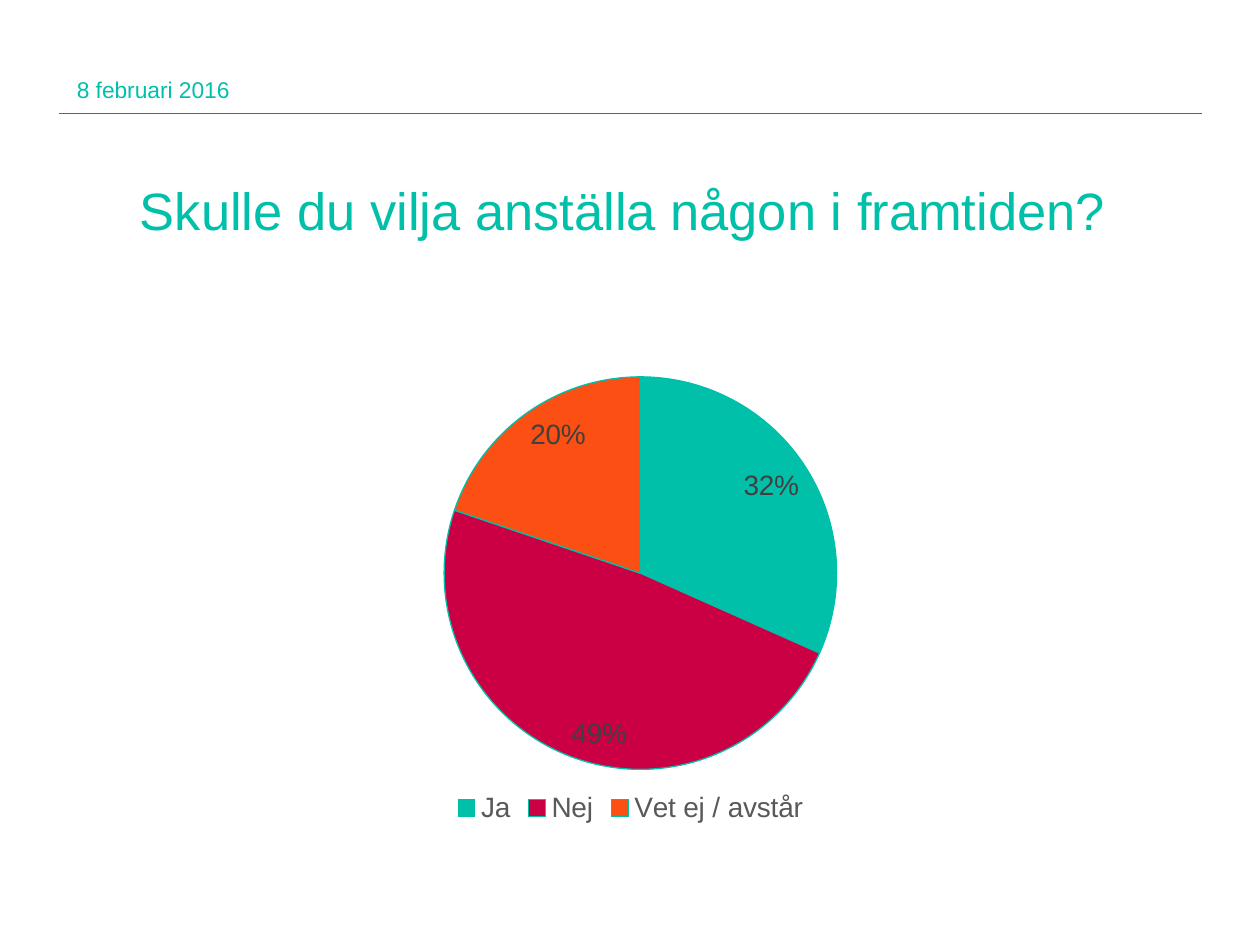
from lxml.etree import SubElement
from pptx import Presentation
from pptx.chart.data import CategoryChartData
from pptx.dml.color import RGBColor
from pptx.enum.chart import XL_CHART_TYPE as ChartType
from pptx.enum.chart import XL_LABEL_POSITION as LabelPosition
from pptx.enum.chart import XL_LEGEND_POSITION as LegendPosition
from pptx.enum.shapes import MSO_CONNECTOR as Connector
from pptx.enum.text import MSO_ANCHOR as Anchor
from pptx.enum.text import MSO_AUTO_SIZE as AutoSize
from pptx.enum.text import PP_ALIGN as Align
from pptx.oxml import parse_xml
from pptx.oxml.ns import nsdecls, qn
from pptx.util import Inches, Pt

TEAL = RGBColor(0x00, 0xC0, 0xA9)
CRIMSON = RGBColor(0xCB, 0x00, 0x44)
ORANGE = RGBColor(0xFB, 0x4F, 0x14)
RULE_GREY = RGBColor(0x60, 0x60, 0x60)
LEGEND_GREY = RGBColor(0x59, 0x59, 0x59)
LABEL_GREY = RGBColor(0x40, 0x40, 0x40)


class SlideBuilder:
    """Style and current slide; lengths are percentages of the slide's size."""

    font_name = "Arial"

    def __init__(self, presentation):
        self.width = presentation.slide_width
        self.height = presentation.slide_height
        self.slide = presentation.slides.add_slide(presentation.slide_layouts[5])

    def box(self, left, top, width, height):
        return (int(self.width * left / 100), int(self.height * top / 100),
                int(self.width * width / 100), int(self.height * height / 100))

    def style_font(self, font, size, color):
        font.name = self.font_name
        font.size = Pt(size)
        font.color.rgb = color

    def fill_text(self, shape, text, size, anchor):
        frame = shape.text_frame
        frame.word_wrap = True
        frame.auto_size = AutoSize.NONE
        frame.vertical_anchor = anchor
        frame.margin_left = frame.margin_right = 0
        frame.margin_top = frame.margin_bottom = 0
        paragraph = frame.paragraphs[0]
        paragraph.alignment = Align.LEFT
        run = paragraph.add_run()
        run.text = text
        self.style_font(run.font, size, TEAL)

    def title(self, text, *place):
        shape = self.slide.shapes.title
        shape.left, shape.top, shape.width, shape.height = self.box(*place)
        self.fill_text(shape, text, 30, Anchor.TOP)

    def text(self, text, *place):
        shape = self.slide.shapes.add_textbox(*self.box(*place))
        self.fill_text(shape, text, 13, Anchor.MIDDLE)

    def rule(self, left, top, width):
        x, y, length, _ = self.box(left, top, width, 0)
        line = self.slide.shapes.add_connector(Connector.STRAIGHT, x, y, x + length, y)
        line.line.color.rgb = RULE_GREY
        line.line.width = Pt(0.5)
        SubElement(line._element.spPr, qn("a:effectLst"))

    def pie(self, slices, plot_area, *place):
        data = CategoryChartData(number_format="0%")
        data.categories = [name for name, _, _ in slices]
        data.add_series("Series 1", [value for _, value, _ in slices])
        chart = self.slide.shapes.add_chart(ChartType.PIE, *self.box(*place), data).chart
        chart.has_title = False
        chart.font.name = self.font_name
        chart.font.size = Pt(10)

        # Slices
        plot = chart.plots[0]
        plot.vary_by_categories = True
        for index, (_, _, color) in enumerate(slices):
            point = plot.series[0].points[index].format
            point.fill.solid()
            point.fill.fore_color.rgb = color
            point.line.color.rgb = TEAL
            point.line.width = Pt(0.75)

        # Labels and legend
        plot.has_data_labels = True
        labels = plot.data_labels
        labels.show_value = True
        labels.show_percentage = False
        labels.number_format = "0%"
        labels.number_format_is_linked = False
        labels.position = LabelPosition.INSIDE_END
        self.style_font(labels.font, 16, LABEL_GREY)
        chart.has_legend = True
        chart.legend.position = LegendPosition.BOTTOM
        chart.legend.include_in_layout = False
        self.style_font(chart.legend.font, 16, LEGEND_GREY)
        self.place_plot(chart, plot_area)

    def place_plot(self, chart, plot_area):
        lengths = "".join(f'<c:{tag} val="{share}"/>'
                          for tag, share in zip("xywh", plot_area))
        layout = parse_xml(
            f'<c:layout {nsdecls("c")}><c:manualLayout><c:layoutTarget val="inner"/>'
            f'<c:xMode val="edge"/><c:yMode val="edge"/>{lengths}'
            '</c:manualLayout></c:layout>')
        area = chart._chartSpace.chart.plotArea
        for old_layout in area.findall(qn("c:layout")):
            area.remove(old_layout)
        area.insert(0, layout)


def main():
    presentation = Presentation()
    presentation.slide_width = Inches(10)
    presentation.slide_height = Inches(7.5)
    builder = SlideBuilder(presentation)

    # Header
    builder.rule(4.7, 12, 90.7)
    builder.text("8 februari 2016", 6.1, 6.8, 23.3, 5.3)

    # Question and answers
    builder.title("Skulle du vilja anställa någon i framtiden?", 11.1, 18.8, 77.9, 12.8)
    answers = [("Ja", 0.32, TEAL), ("Nej", 0.49, CRIMSON),
               ("Vet ej / avstår", 0.2, ORANGE)]
    builder.pie(answers, (0.31, 0.08, 0.4, 0.8), 11.1, 35.7, 77.9, 52)

    presentation.save("out.pptx")


if __name__ == "__main__":
    main()
